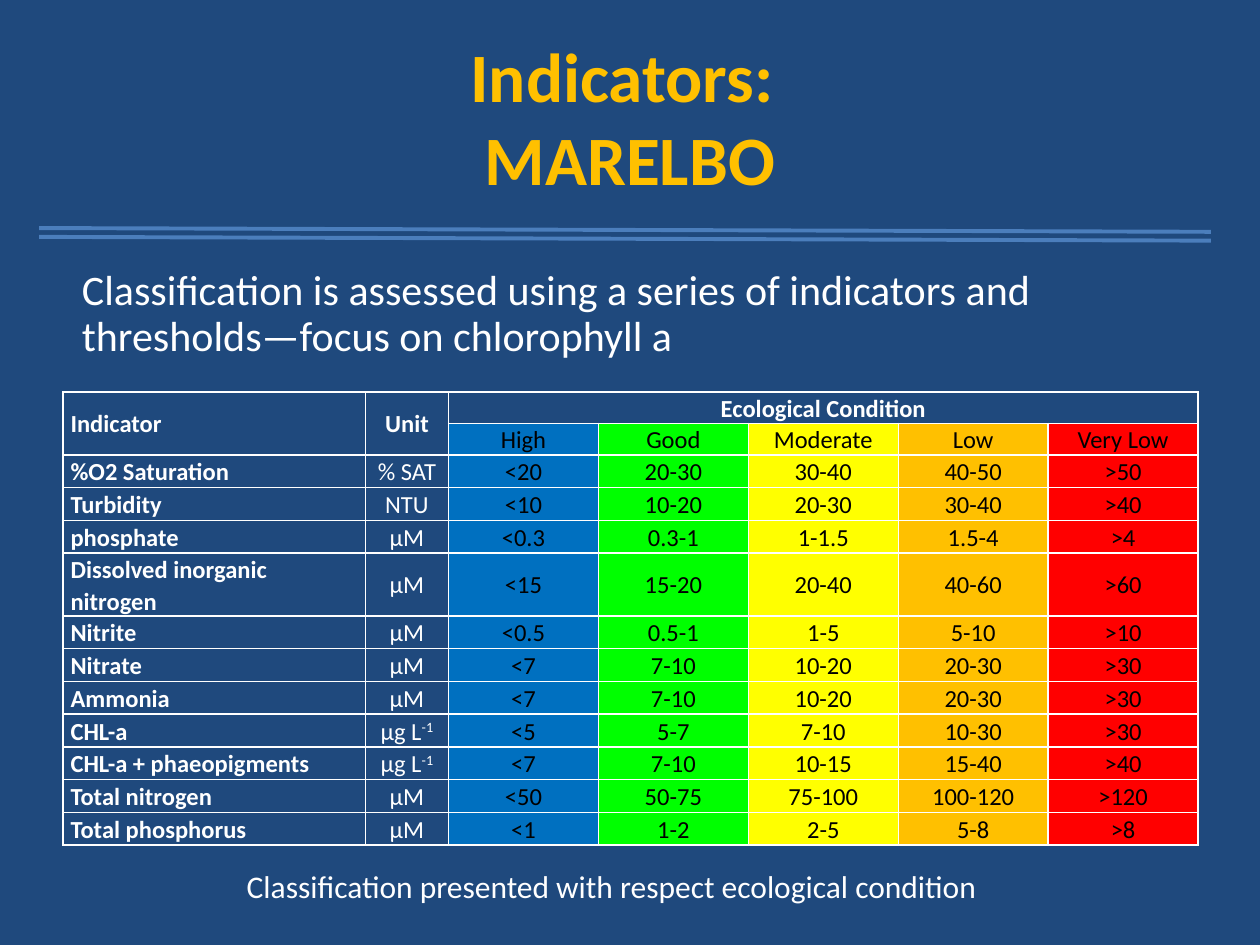
from lxml.etree import SubElement
from pptx import Presentation
from pptx.dml.color import RGBColor
from pptx.enum.shapes import MSO_CONNECTOR
from pptx.enum.text import MSO_ANCHOR, MSO_AUTO_SIZE, PP_ALIGN
from pptx.oxml.ns import qn
from pptx.util import Inches, Pt

NAVY = RGBColor(0x1F, 0x49, 0x7D)
GOLD = RGBColor(0xFF, 0xC0, 0x00)
WHITE = RGBColor(0xFF, 0xFF, 0xFF)
BLACK = RGBColor(0x00, 0x00, 0x00)
RULE = RGBColor(0x4B, 0x7E, 0xBC)
CLASS_FILLS = [
    RGBColor(0x00, 0x70, 0xC0),
    RGBColor(0x00, 0xFF, 0x00),
    RGBColor(0xFF, 0xFF, 0x00),
    GOLD,
    RGBColor(0xFF, 0x00, 0x00),
]
FONT = "Calibri"
LITRE = "μg L^-1"
ROWS = [
    ["Indicator", "Unit", "Ecological Condition", "", "", "", ""],
    ["", "", "High", "Good", "Moderate", "Low", "Very Low"],
    ["%O2 Saturation", "% SAT", "<20", "20-30", "30-40", "40-50", ">50"],
    ["Turbidity", "NTU", "<10", "10-20", "20-30", "30-40", ">40"],
    ["phosphate", "μM", "<0.3", "0.3-1", "1-1.5", "1.5-4", ">4"],
    ["Dissolved inorganic nitrogen", "μM", "<15", "15-20", "20-40", "40-60", ">60"],
    ["Nitrite", "μM", "<0.5", "0.5-1", "1-5", "5-10", ">10"],
    ["Nitrate", "μM", "<7", "7-10", "10-20", "20-30", ">30"],
    ["Ammonia", "μM", "<7", "7-10", "10-20", "20-30", ">30"],
    ["CHL-a", LITRE, "<5", "5-7", "7-10", "10-30", ">30"],
    ["CHL-a + phaeopigments", LITRE, "<7", "7-10", "10-15", "15-40", ">40"],
    ["Total nitrogen", "μM", "<50", "50-75", "75-100", "100-120", ">120"],
    ["Total phosphorus", "μM", "<1", "1-2", "2-5", "5-8", ">8"],
]
COL_WIDTHS = [2.4, 0.66] + [1.19] * 5


def write(tf, text, size, color=WHITE, bold=False, align=PP_ALIGN.LEFT,
          spacing=None, before=None):
    p = tf.paragraphs[0]
    base, _, superscript = text.partition("^")
    p.text = base
    if superscript:
        p.add_run().text = superscript
        p.runs[-1].font._element.set("baseline", "30000")
    p.alignment = align
    if spacing:
        p.line_spacing = spacing
    if before is not None:
        p.space_before = Pt(before)
    for r in p.runs:
        r.font.name = FONT
        r.font.size = Pt(size)
        r.font.bold = bold
        r.font.color.rgb = color


def set_margins(box, x, y):
    box.margin_left = box.margin_right = Inches(x)
    box.margin_top = box.margin_bottom = Inches(y)


def add_title(s, left, top, width, height):
    sp = s.shapes.title
    sp.left, sp.top = Inches(left), Inches(top)
    sp.width, sp.height = Inches(width), Inches(height)
    tf = sp.text_frame
    tf.auto_size = MSO_AUTO_SIZE.NONE
    tf.vertical_anchor = MSO_ANCHOR.MIDDLE
    write(tf, "Indicators: \vMARELBO", 39.6, GOLD, True, PP_ALIGN.CENTER)


def add_double_rule(s, left, top, width, drop, gap):
    for y in (top, top + gap):
        line = s.shapes.add_connector(
            MSO_CONNECTOR.STRAIGHT, Inches(left), Inches(y),
            Inches(left + width), Inches(y + drop))
        line.line.color.rgb = RULE
        line.line.width = Pt(2.25)
        SubElement(line._element.spPr, qn("a:effectLst"))


def add_intro(s, left, top, width, height):
    sp = s.shapes.add_textbox(Inches(left), Inches(top), Inches(width), Inches(height))
    tf = sp.text_frame
    tf.word_wrap = True
    set_margins(tf, 0.07, 0.04)
    write(tf, "Classification is assessed using a series of indicators and "
          "thresholds—focus on chlorophyll a", 24, spacing=0.9, before=10)


def add_borders(cell):
    tc_pr = cell._tc.get_or_add_tcPr()
    for side in ("lnL", "lnR", "lnT", "lnB"):
        ln = SubElement(tc_pr, qn(f"a:{side}"), w=str(Pt(1)))
        fill = SubElement(ln, qn("a:solidFill"))
        SubElement(fill, qn("a:srgbClr"), val=str(WHITE))


def format_cell(cell, text, row, col):
    rated = row > 0 and col > 1
    set_margins(cell, 0.06, 0)
    cell.vertical_anchor = MSO_ANCHOR.MIDDLE
    add_borders(cell)
    if rated:
        cell.fill.solid()
        cell.fill.fore_color.rgb = CLASS_FILLS[col - 2]
    else:
        cell.fill.background()
    write(cell.text_frame, text, 14, BLACK if rated else WHITE,
          row == 0 or col == 0,
          PP_ALIGN.CENTER if col else PP_ALIGN.LEFT, 1.07)


def add_threshold_table(s, left, top, width, height):
    frame = s.shapes.add_table(len(ROWS), len(COL_WIDTHS), Inches(left),
                               Inches(top), Inches(width), Inches(height))
    table = frame.table
    table.first_row = table.horz_banding = False
    for column, col_width in zip(table.columns, COL_WIDTHS):
        column.width = Inches(col_width)
    for i, values in enumerate(ROWS):
        table.rows[i].height = Inches(0.21 if i < 2 else 0.26)
        for j, text in enumerate(values):
            format_cell(table.cell(i, j), text, i, j)
    for first, last in (((0, 0), (1, 0)), ((0, 1), (1, 1)), ((0, 2), (0, 6))):
        table.cell(*first).merge(table.cell(*last))


def add_caption(s, left, top, width, height):
    sp = s.shapes.add_textbox(Inches(left), Inches(top), Inches(width), Inches(height))
    tf = sp.text_frame
    tf.word_wrap = False
    tf.auto_size = MSO_AUTO_SIZE.SHAPE_TO_FIT_TEXT
    write(tf, "Classification presented with respect ecological condition", 18)


def main():
    prs = Presentation()
    prs.slide_width, prs.slide_height = Inches(10), Inches(7.5)
    s = prs.slides.add_slide(prs.slide_layouts[5])
    s.background.fill.solid()
    s.background.fill.fore_color.rgb = NAVY
    add_title(s, 0.5, 0.3, 9, 1.25)
    add_intro(s, 0.58, 2.1, 8.62, 0.71)
    add_threshold_table(s, 0.5, 3.11, 9, 3.59)
    add_double_rule(s, 0.31, 1.81, 9.3, 0.03, 0.07)
    add_caption(s, 1.86, 6.83, 6.07, 0.4)
    prs.save("out.pptx")


if __name__ == "__main__":
    main()
